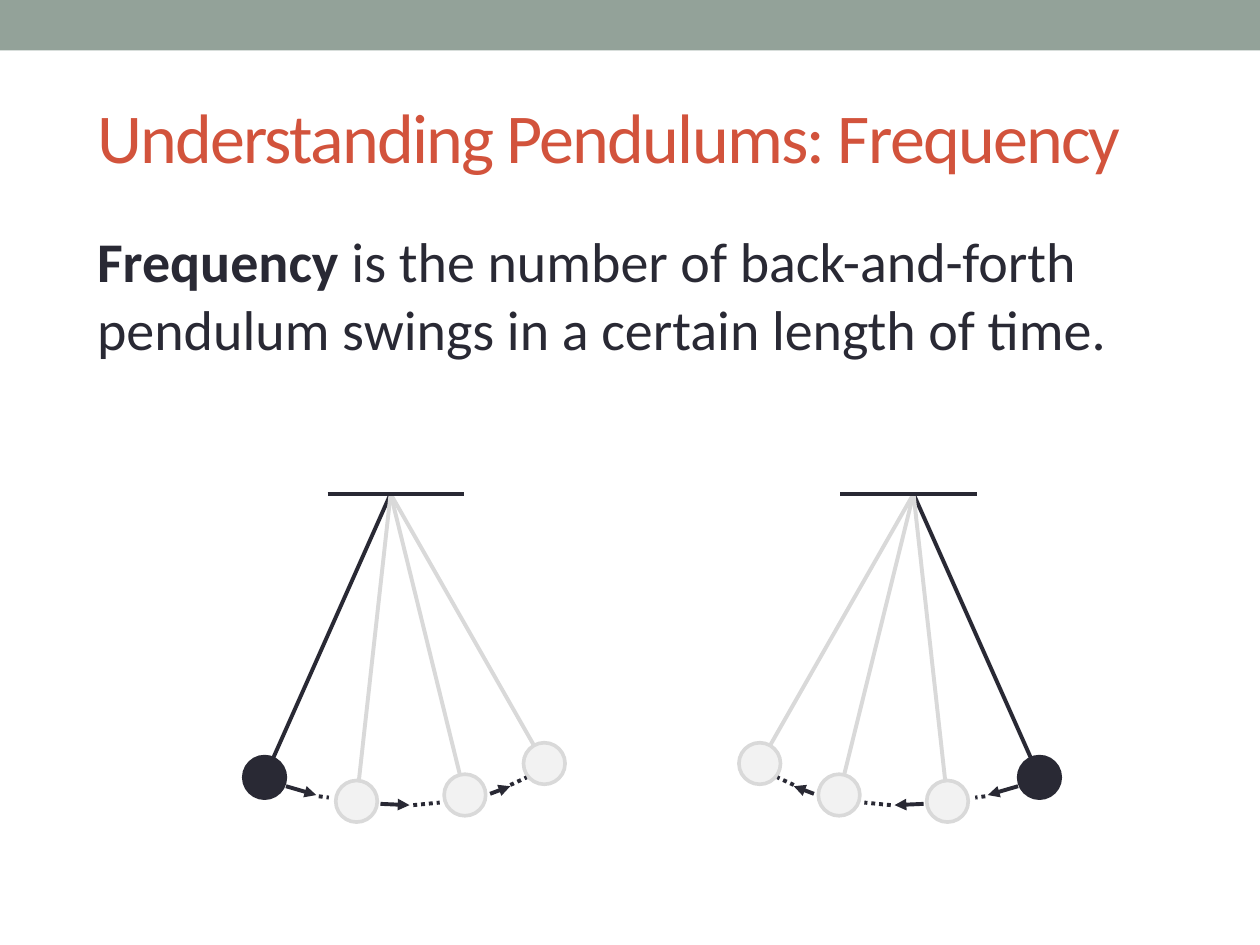
from lxml import etree
from pptx import Presentation
from pptx.dml.color import RGBColor
from pptx.enum.dml import MSO_LINE
from pptx.enum.shapes import MSO_CONNECTOR, MSO_SHAPE
from pptx.enum.text import MSO_ANCHOR, MSO_AUTO_SIZE, PP_ALIGN
from pptx.oxml.ns import qn
from pptx.util import Inches, Pt

STRAIGHT = MSO_CONNECTOR.STRAIGHT
OVAL, RECTANGLE = MSO_SHAPE.OVAL, MSO_SHAPE.RECTANGLE
DOTTED = MSO_LINE.ROUND_DOT
LEFT, MIDDLE = PP_ALIGN.LEFT, MSO_ANCHOR.MIDDLE

# Content
TITLE = "Understanding Pendulums: Frequency"
BODY = [
    ("Frequency", True),
    (" is the number of back-and-forth pendulum swings in a certain length of time.", False),
]
FONT = "Calibri"
DARK, PALE, PALE_FILL = "292934", "D9D9D9", "F2F2F2"
GREEN, RED = "93A299", "D2533C"

# Left pendulum, in inches; the right one is its mirror
PIVOT = (3.1, 3.92)
SUPPORT = ((2.6, 3.92), (3.68, 3.92))
BOBS = [  # centre, fill, line
    ((2.1, 6.17), DARK, DARK),
    ((2.83, 6.36), PALE_FILL, PALE),
    ((3.69, 6.31), PALE_FILL, PALE),
    ((4.32, 6.06), PALE_FILL, PALE),
]
ARROWS = [((2.27, 6.24), (2.51, 6.31)), ((3.02, 6.38), (3.25, 6.39)), ((3.89, 6.3), (4.05, 6.24))]
DOTS = [((2.53, 6.32), (2.61, 6.33)), ((3.28, 6.39), (3.49, 6.37)), ((4.05, 6.23), (4.18, 6.17))]
BOB_SIZE = 0.33
MIRROR_SUM = 10.35  # left x + matching right x


def color(value):
    return RGBColor.from_string(value)


def place(shape, left, top, width, height):
    shape.left, shape.top = Inches(left), Inches(top)
    shape.width, shape.height = Inches(width), Inches(height)


def add_line(shapes, start, end, line_color, arrow=False, dotted=False):
    points = [Inches(value) for value in (*start, *end)]
    connector = shapes.add_connector(STRAIGHT, *points)
    connector.line.color.rgb = color(line_color)
    connector.line.width = Pt(2.25)
    if dotted:
        connector.line.dash_style = DOTTED
    properties = connector.element.spPr
    if arrow:
        outline = properties.find(qn("a:ln"))
        etree.SubElement(outline, qn("a:tailEnd"), type="triangle")
    etree.SubElement(properties, qn("a:effectLst"))


def add_bob(shapes, center, fill, line):
    left, top = (Inches(value - BOB_SIZE / 2) for value in center)
    bob = shapes.add_shape(OVAL, left, top, Inches(BOB_SIZE), Inches(BOB_SIZE))
    bob.shadow.inherit = False
    bob.fill.solid()
    bob.fill.fore_color.rgb = color(fill)
    bob.line.color.rgb = color(line)
    bob.line.width = Pt(2.08)


def add_pendulum(slide, mirrored):
    shapes = slide.shapes.add_group_shape().shapes

    def at(point):
        return (MIRROR_SUM - point[0], point[1]) if mirrored else point

    for center, _, line in BOBS:
        add_line(shapes, at(PIVOT), at(center), line)
    for center, fill, line in BOBS:
        add_bob(shapes, at(center), fill, line)
    for start, end in ARROWS:
        add_line(shapes, at(start), at(end), DARK, arrow=True)
    for start, end in DOTS:
        add_line(shapes, at(start), at(end), DARK, dotted=True)
    add_line(shapes, at(SUPPORT[0]), at(SUPPORT[1]), DARK)


def format_paragraph(paragraph, size, text_color):
    paragraph.alignment = LEFT
    paragraph.font.name = FONT
    paragraph.font.size = Pt(size)
    paragraph.font.color.rgb = color(text_color)


presentation = Presentation()
presentation.slide_width, presentation.slide_height = Inches(10), Inches(7.5)
slide = presentation.slides.add_slide(presentation.slide_layouts[1])

# Top band
band = slide.shapes.add_shape(RECTANGLE, 0, 0, Inches(10), Inches(0.4))
band.shadow.inherit = False
band.fill.solid()
band.fill.fore_color.rgb = color(GREEN)
band.line.fill.background()

# Title
title = slide.shapes.title
place(title, 0.67, 0.45, 8.5, 1.25)
title.text_frame.text = TITLE
title.text_frame.auto_size = MSO_AUTO_SIZE.NONE
title.text_frame.vertical_anchor = MIDDLE
paragraph = title.text_frame.paragraphs[0]
format_paragraph(paragraph, 40, RED)
paragraph.runs[0].font._element.set("spc", "-100")

# Definition
body = slide.placeholders[1]
place(body, 0.67, 1.75, 8.83, 5.33)
body.text_frame.auto_size = MSO_AUTO_SIZE.NONE
paragraph = body.text_frame.paragraphs[0]
for text, bold in BODY:
    run = paragraph.add_run()
    run.text = text
    run.font.bold = bold
format_paragraph(paragraph, 32, DARK)
paragraph.space_before = Pt(6.4)
properties = paragraph._p.get_or_add_pPr()
properties.set("marL", "0")
properties.set("indent", "0")
properties.insert_element_before(etree.Element(qn("a:buNone")), "a:tabLst", "a:defRPr", "a:extLst")

# Pendulums
for mirrored in (False, True):
    add_pendulum(slide, mirrored)

presentation.save("out.pptx")
